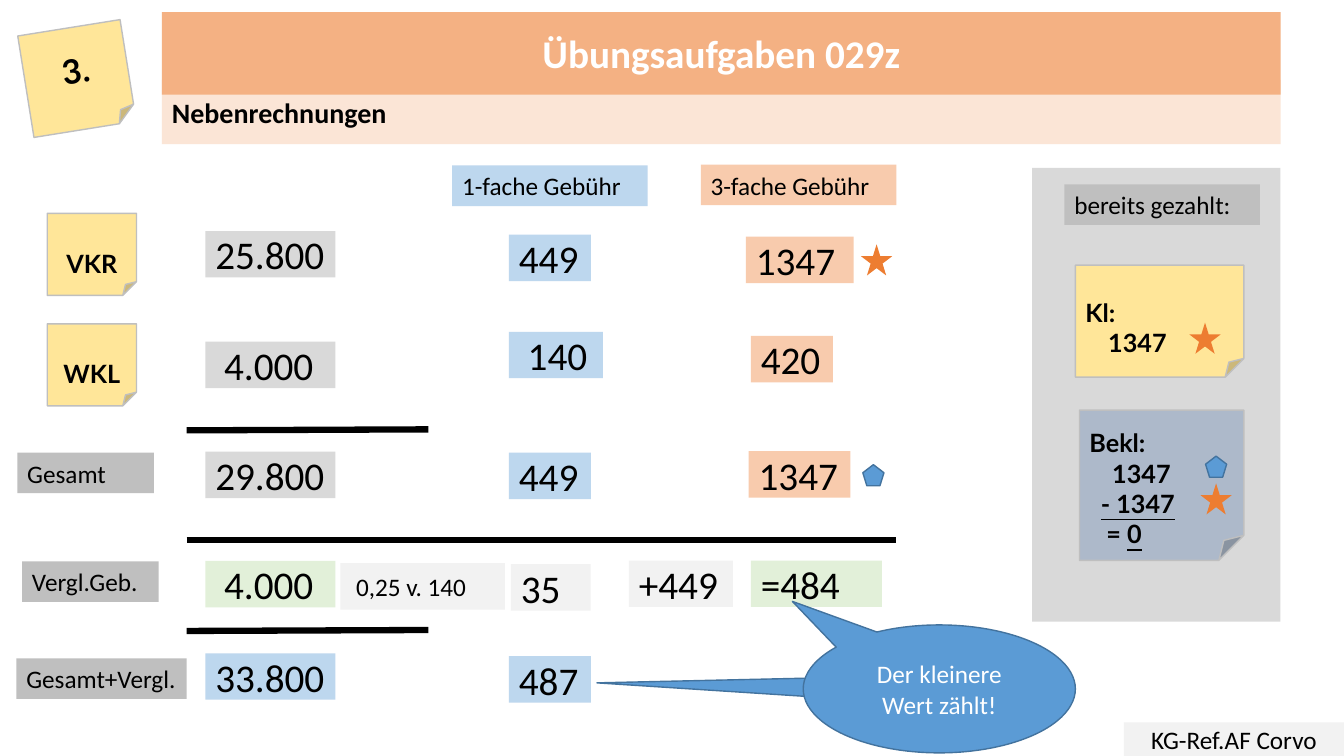
from dataclasses import dataclass, field
from typing import Any

import lxml.etree
import pptx
import pptx.dml.color
import pptx.enum.shapes
import pptx.enum.text
import pptx.oxml.ns
import pptx.util

Pt = pptx.util.Pt
RGB = pptx.dml.color.RGBColor
SHAPE = pptx.enum.shapes.MSO_SHAPE
ALIGN = pptx.enum.text.PP_ALIGN
qn = pptx.oxml.ns.qn

BLACK = RGB(0x00, 0x00, 0x00)
WHITE = RGB(0xFF, 0xFF, 0xFF)
PALE_GREY = RGB(0xF2, 0xF2, 0xF2)
LIGHT_GREY = RGB(0xD9, 0xD9, 0xD9)
GREY = RGB(0xBF, 0xBF, 0xBF)
LIGHT_BLUE = RGB(0xBD, 0xD7, 0xEE)
BLUE = RGB(0x5B, 0x9B, 0xD5)
DARK_BLUE = RGB(0x43, 0x73, 0x9E)
SLATE = RGB(0xAD, 0xB9, 0xCA)
PEACH = RGB(0xF8, 0xCB, 0xAD)
PALE_PEACH = RGB(0xFB, 0xE5, 0xD6)
APRICOT = RGB(0xF4, 0xB1, 0x83)
ORANGE = RGB(0xED, 0x7D, 0x31)
YELLOW = RGB(0xFF, 0xE6, 0x99)
GREEN = RGB(0xE2, 0xF0, 0xD9)

LABEL = {"size": Pt(18), "name": "Calibri", "bold": False}
VALUE = LABEL | {"size": Pt(28)}
HEADING = LABEL | {"size": Pt(20), "bold": True}
TITLE = VALUE | {"bold": True}
NOTE = LABEL | {"name": "Lato", "bold": True}
NOTE_NUMBER = NOTE | {"size": Pt(24)}
NOTE_TOP = 25.6  # top inset that lowers the text of a note by one line


@dataclass
class Para:
    plain: str = ""
    underlined: str = ""
    indent: float = 0


@dataclass
class Box:
    left: float
    top: float
    width: float
    height: float
    fill: RGB
    paras: list[Para] = field(default_factory=list)
    font: dict[str, Any] = field(default_factory=lambda: LABEL)
    align: ALIGN = ALIGN.LEFT
    kind: SHAPE = SHAPE.RECTANGLE
    line: RGB | None = None
    color: RGB = BLACK
    margin_top: float = 3.6
    rotation: float = 0
    adjustments: tuple[float, ...] = ()


def write(tf: Any, box: Box) -> None:
    tf.vertical_anchor = pptx.enum.text.MSO_ANCHOR.MIDDLE
    tf.margin_top = Pt(box.margin_top)
    for i, para in enumerate(box.paras):
        p = tf.add_paragraph() if i else tf.paragraphs[0]
        p.alignment = box.align
        if para.indent:
            p._p.get_or_add_pPr().set("marL", str(Pt(para.indent)))
        for text, underline in ((para.plain, False), (para.underlined, True)):
            if text:
                r = p.add_run()
                r.text = text
                for name, value in (box.font | {"underline": underline}).items():
                    setattr(r.font, name, value)
                r.font.color.rgb = box.color


def draw(shapes: Any, box: Box) -> Any:
    sp = shapes.add_shape(box.kind, Pt(box.left), Pt(box.top), Pt(box.width), Pt(box.height))
    sp.shadow.inherit = False
    sp.rotation = box.rotation
    sp.fill.solid()
    sp.fill.fore_color.rgb = box.fill
    if box.line is None:
        sp.line.fill.background()
    else:
        sp.line.color.rgb = box.line
        sp.line.width = Pt(1)
    for i, value in enumerate(box.adjustments):
        sp.adjustments[i] = value
    write(sp.text_frame, box)
    return sp


def label(text: str, left: float, top: float, width: float, fill: RGB = GREY) -> Box:
    return Box(left, top, width, 29, fill, [Para(text)])


def value(text: str, left: float, top: float, width: float, fill: RGB, indent: float = 0) -> Box:
    return Box(left, top, width, 33.2, fill, [Para(text, indent=indent)], VALUE)


def amount(text: str, top: float, fill: RGB = LIGHT_GREY, indent: float = 0) -> Box:
    return value(text, 146.7, top, 92.9, fill, indent)


def single_fee(text: str, top: float) -> Box:
    return value(text, 363.6, top, 58.5, LIGHT_BLUE)


def note(left: float, top: float, width: float, height: float, paras: list[Para],
         fill: RGB = YELLOW, **options: Any) -> Box:
    settings = {"font": NOTE, "margin_top": NOTE_TOP} | options
    return Box(left, top, width, height, fill, paras, kind=SHAPE.FOLDED_CORNER,
               line=GREY, **settings)


def star(left: float, top: float) -> Box:
    return Box(left, top, 22.3, 22.3, ORANGE, kind=SHAPE.STAR_5_POINT)


def pentagon(left: float, top: float) -> Box:
    return Box(left, top, 15.1, 15.1, BLUE, kind=SHAPE.REGULAR_PENTAGON, line=DARK_BLUE)


def callout(left: float, top: float, width: float, height: float,
            tip: tuple[float, float], paras: list[Para]) -> Box:
    return Box(left, top, width, height, BLUE, paras, align=ALIGN.CENTER,
               kind=SHAPE.OVAL_CALLOUT, line=DARK_BLUE, color=WHITE, adjustments=tip)


def draw_title(s: Any, behind: Any) -> None:
    """Place the title placeholder as a rounded bar just above the given shape."""
    box = Box(115.7, 8.6, 799, 59, APRICOT, [Para("Übungsaufgaben 029z")], TITLE,
              ALIGN.CENTER, color=WHITE)
    sp = s.shapes.title
    for name in ("left", "top", "width", "height"):
        setattr(sp, name, Pt(getattr(box, name)))
    geometry = lxml.etree.SubElement(sp.element.spPr, qn("a:prstGeom"), prst="roundRect")
    lxml.etree.SubElement(geometry, qn("a:avLst"))
    sp.fill.solid()
    sp.fill.fore_color.rgb = box.fill
    sp.text_frame.auto_size = pptx.enum.text.MSO_AUTO_SIZE.NONE
    write(sp.text_frame, box)
    behind.element.addnext(sp.element)


def draw_rule(s: Any, right: float, start: float, end: float) -> None:
    line = s.shapes.add_connector(pptx.enum.shapes.MSO_CONNECTOR.STRAIGHT,
                                  Pt(133.3), Pt(start), Pt(right), Pt(end))
    line.line.color.rgb = BLACK
    line.line.width = Pt(4.5)
    lxml.etree.SubElement(line.element.spPr, qn("a:effectLst"))


PANEL = Box(737.3, 120, 177.4, 324, LIGHT_GREY)
BAND = Box(115.7, 57, 799, 46, PALE_PEACH, [Para("Nebenrechnungen")], HEADING)

CALCULATION = [
    Box(802.8, 516, 157.2, 24, PALE_GREY, [Para("KG-Ref.AF Corvo")], align=ALIGN.CENTER),
    note(18, 19.4, 74, 73.4, [Para("3.")], font=NOTE_NUMBER, margin_top=3.6,
         align=ALIGN.CENTER, rotation=350.9),
    label("1-fache Gebühr", 323, 118.2, 139.7, LIGHT_BLUE),
    label("3-fache Gebühr", 500.6, 117.6, 139.7, PEACH),
    note(33.8, 152.4, 63.7, 58.6, [Para("VKR")], align=ALIGN.CENTER),
    amount("25.800", 165),
    single_fee("449", 167.6),
    value("1347", 532.8, 169, 77, PEACH),
    star(615, 174.5),
    note(33.8, 231.3, 63.7, 58.6, [Para("WKL")], align=ALIGN.CENTER),
    amount("4.000", 244, indent=6.3),
    value("140", 363.6, 237, 67, LIGHT_BLUE, 6.3),
    value("420", 536.4, 239.9, 58.5, PEACH),
    label("Gesamt", 12.4, 323.3, 97.5),
    amount("29.800", 322.6),
    single_fee("449", 323.3),
    value("1347", 534.8, 322.3, 72.7, PEACH),
    pentagon(616.3, 331.9),
    label("Vergl.Geb.", 15.8, 401, 97.5),
    amount("4.000", 400.7, GREEN, 6.3),
    Box(243.2, 402.2, 117.4, 33.2, PALE_GREY, [Para("0,25 v. 140", indent=4.1)]),
    value("35", 365, 403, 57, PALE_GREY),
    value("+449", 449.3, 400.4, 74.2, PALE_GREY),
    value("=484", 536.4, 400.4, 93.6, GREEN),
    label("Gesamt+Vergl.", 11.7, 470.2, 121.7),
    amount("33.800", 466.6, LIGHT_BLUE),
    single_fee("487", 468.7),
    label("bereits gezahlt:", 760.3, 131.6, 139.7),
]

GROUPS = [
    [note(768.2, 189.4, 120.3, 80, [Para("Kl:"), Para("1347", indent=16.3)]),
     star(849.6, 230.4)],
    [note(771.1, 293, 117.4, 107.3,
          [Para("Bekl:"), Para("1347", indent=16.3),
           Para(underlined="- 1347", indent=8.1), Para("= ", "0", 12.2)], SLATE),
     pentagon(861.1, 325.8), star(857.5, 345.2)],
    [callout(587.5, 455.8, 167, 74.2, (-1.465, -0.069), []),
     callout(573.8, 446.4, 194.4, 91.4, (-0.54, -0.684),
             [Para("Der kleinere Wert zählt!")])],
]

RULES = [(306, 307.4, 306.7), (640, 385.9, 385.9), (306, 450.7, 450)]


def main() -> None:
    prs = pptx.Presentation()
    prs.slide_width, prs.slide_height = Pt(960), Pt(540)
    s = prs.slides.add_slide(prs.slide_layouts[5])
    draw(s.shapes, PANEL)
    draw_title(s, draw(s.shapes, BAND))
    for box in CALCULATION:
        draw(s.shapes, box)
    for rule in RULES:
        draw_rule(s, *rule)
    for boxes in GROUPS:
        group = s.shapes.add_group_shape()
        for box in boxes:
            draw(group.shapes, box)
    prs.save("out.pptx")


if __name__ == "__main__":
    main()
